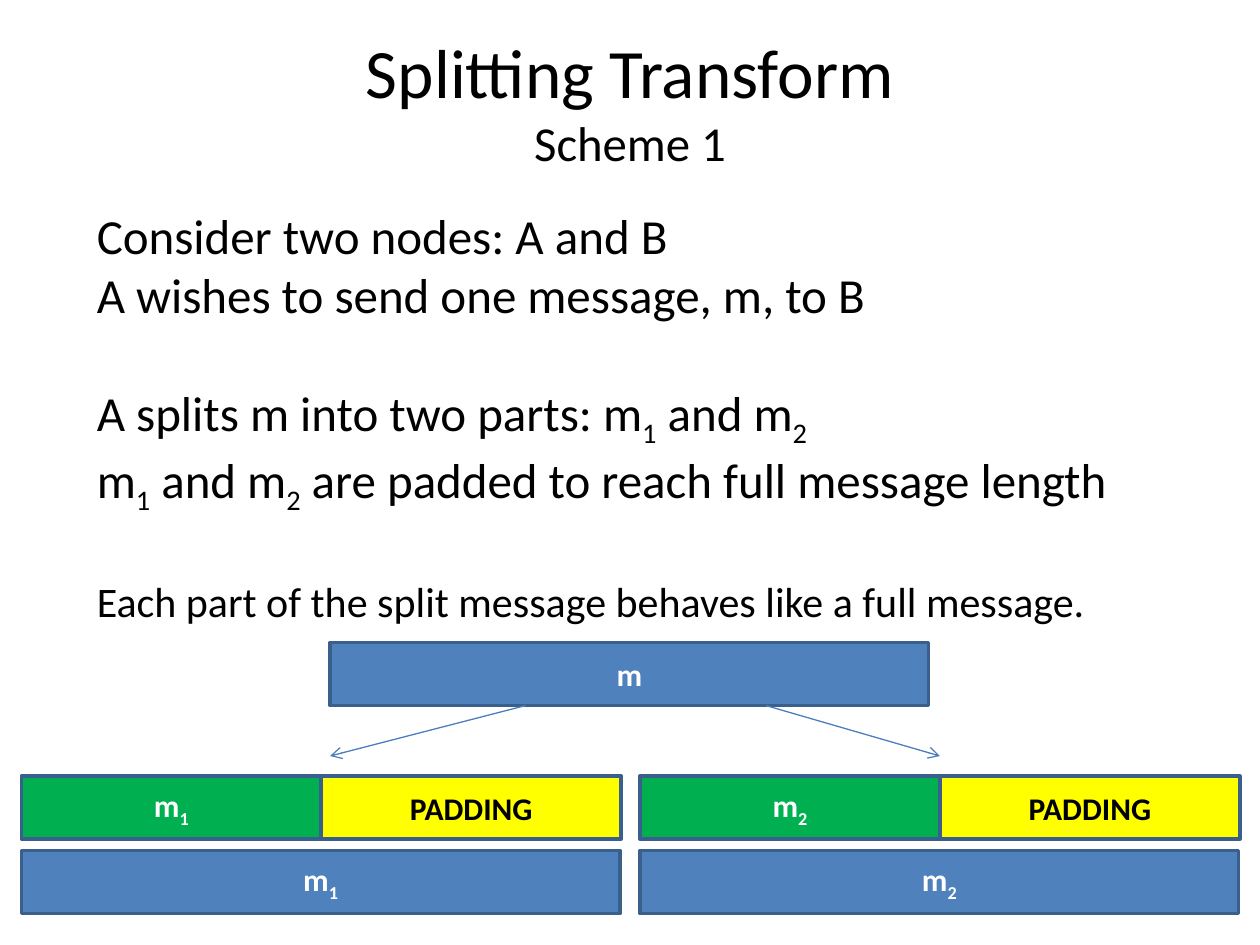
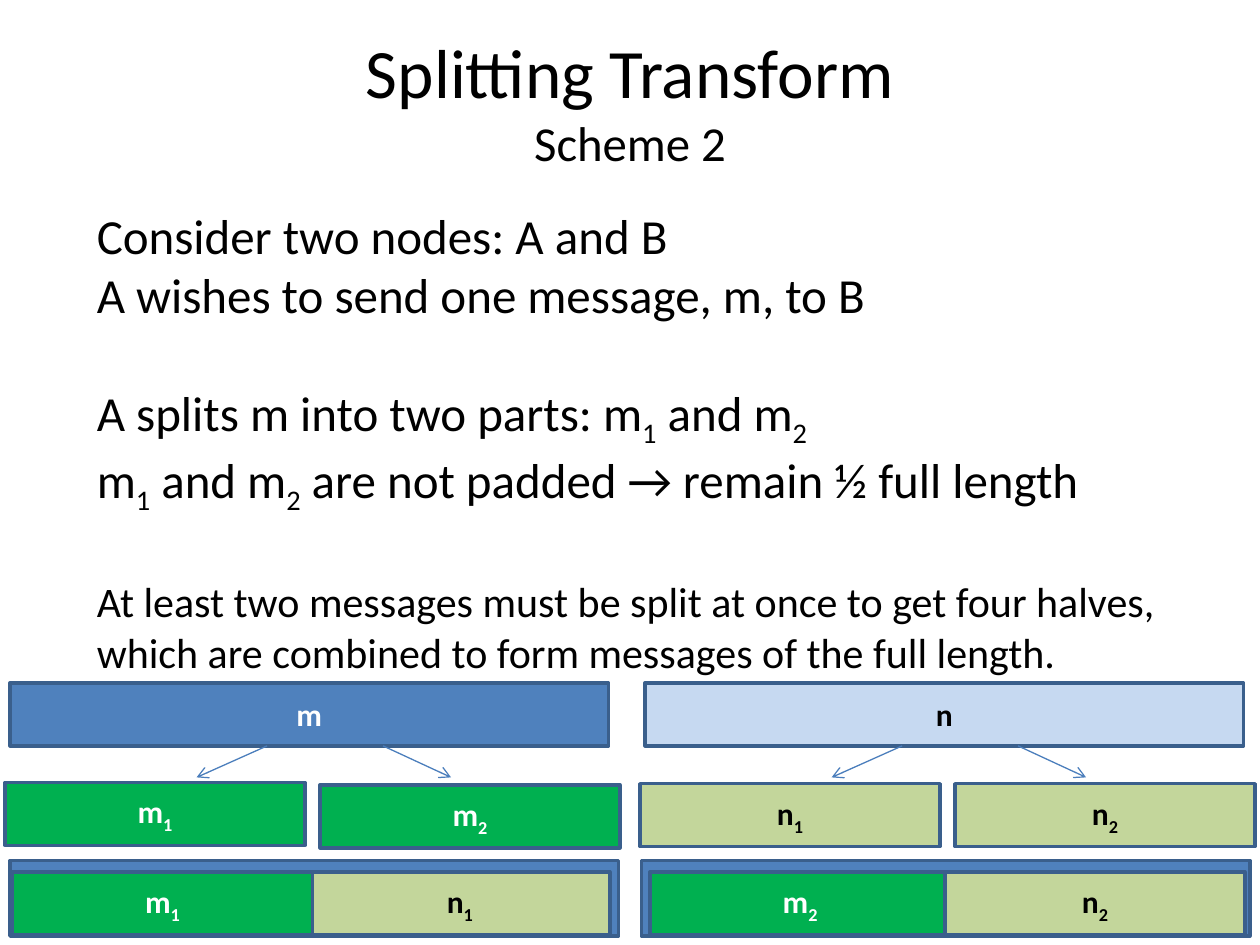
"""Builds two slides that explain the splitting transform schemes."""
from dataclasses import dataclass
from typing import NamedTuple

import lxml.etree
import pptx
import pptx.dml.color
import pptx.enum.shapes
import pptx.enum.text
import pptx.oxml.ns
import pptx.presentation
import pptx.shapes.connector
import pptx.slide
import pptx.text.text
import pptx.util

Inches = pptx.util.Inches
Pt = pptx.util.Pt
RGBColor = pptx.dml.color.RGBColor

BLACK = RGBColor(0x00, 0x00, 0x00)
WHITE = RGBColor(0xFF, 0xFF, 0xFF)
BLUE = RGBColor(0x4F, 0x81, 0xBD)
PALE_BLUE = RGBColor(0xC6, 0xD9, 0xF1)
GREEN = RGBColor(0x00, 0xB0, 0x50)
PALE_GREEN = RGBColor(0xC3, 0xD6, 0x9B)
YELLOW = RGBColor(0xFF, 0xFF, 0x00)
OUTLINE = RGBColor(0x3A, 0x5F, 0x8C)
ARROW = RGBColor(0x4B, 0x7E, 0xBC)

FONT = "Calibri"
FULL = 4.75
HALF = 2.38
BAR_HEIGHT = 0.5
BLOCK_GAP = Pt(34)
TITLE_ONLY = 5


class Style(NamedTuple):
    """Fill and text colour of a bar."""
    fill: RGBColor
    ink: RGBColor


MESSAGE_M = Style(BLUE, WHITE)
MESSAGE_N = Style(PALE_BLUE, BLACK)
PART_M = Style(GREEN, WHITE)
PART_N = Style(PALE_GREEN, BLACK)
PADDING = Style(YELLOW, BLACK)


@dataclass(frozen=True)
class Bar:
    """A labelled message bar, measured in inches."""
    label: str
    left: float
    top: float
    style: Style
    width: float = HALF
    height: float = BAR_HEIGHT


@dataclass(frozen=True)
class Arrow:
    """A splitting arrow, measured in inches."""
    x1: float
    y1: float
    x2: float
    y2: float


@dataclass(frozen=True)
class Line:
    """A line of body text; an underscore lowers the next character."""
    text: str
    size: int = 28
    new_block: bool = False


def write(p: pptx.text.text._Paragraph, text: str, size: float,
          color: RGBColor, bold: bool = False) -> None:
    """Write text into a paragraph, with subscripts after underscores."""
    first, *rest = text.split("_")
    pieces = [(first, False)]
    for piece in rest:
        pieces += [(piece[0], True), (piece[1:], False)]
    for piece, lowered in pieces:
        if not piece:
            continue
        r = p.add_run()
        r.text = piece
        r.font.name = FONT
        r.font.size = Pt(size)
        r.font.bold = bold
        r.font.color.rgb = color
        if lowered:
            r._r.get_or_add_rPr().set("baseline", "-25000")


def add_title(s: pptx.slide.Slide, scheme: str) -> None:
    """Fill the title placeholder with the topic and the scheme."""
    sp = s.shapes.title
    sp.left, sp.top = Inches(0.5), Inches(0.17)
    sp.width, sp.height = Inches(9), Inches(1.25)
    tf = sp.text_frame
    tf.text = f"Splitting Transform\v{scheme}"
    tf.auto_size = pptx.enum.text.MSO_AUTO_SIZE.NONE
    tf.vertical_anchor = pptx.enum.text.MSO_ANCHOR.MIDDLE
    p = tf.paragraphs[0]
    p.alignment = pptx.enum.text.PP_ALIGN.CENTER
    for r, size in zip(p.runs, (39.6, 27.9)):
        r.font.name = FONT
        r.font.size = Pt(size)
        r.font.color.rgb = BLACK


def add_body(s: pptx.slide.Slide, lines: list[Line]) -> None:
    """Add the explanation, with a gap before each new block."""
    sp = s.shapes.add_textbox(Inches(0.67), Inches(1.58), Inches(8.67), Inches(3.82))
    tf = sp.text_frame
    tf.word_wrap = True
    for i, line in enumerate(lines):
        p = tf.add_paragraph() if i else tf.paragraphs[0]
        p.space_before = BLOCK_GAP if line.new_block else Pt(0)
        write(p, line.text, line.size, BLACK)


def add_bar(s: pptx.slide.Slide, bar: Bar) -> None:
    """Draw one message bar."""
    sp = s.shapes.add_shape(
        pptx.enum.shapes.MSO_SHAPE.RECTANGLE, Inches(bar.left), Inches(bar.top),
        Inches(bar.width), Inches(bar.height))
    sp.shadow.inherit = False
    sp.fill.solid()
    sp.fill.fore_color.rgb = bar.style.fill
    sp.line.color.rgb = OUTLINE
    sp.line.width = Pt(2)
    tf = sp.text_frame
    tf.vertical_anchor = pptx.enum.text.MSO_ANCHOR.MIDDLE
    p = tf.paragraphs[0]
    p.alignment = pptx.enum.text.PP_ALIGN.CENTER
    write(p, bar.label, 18, bar.style.ink, bold=True)


def add_arrow(s: pptx.slide.Slide, arrow: Arrow) -> None:
    """Draw one arrow with an open head at its end."""
    cxn = s.shapes.add_connector(
        pptx.enum.shapes.MSO_CONNECTOR.STRAIGHT, Inches(arrow.x1), Inches(arrow.y1),
        Inches(arrow.x2), Inches(arrow.y2))
    cxn.line.color.rgb = ARROW
    cxn.line.width = Pt(0.75)
    qn = pptx.oxml.ns.qn
    lxml.etree.SubElement(cxn.line._get_or_add_ln(), qn("a:tailEnd"), type="arrow")
    lxml.etree.SubElement(cxn._element.spPr, qn("a:effectLst"))


def add_scheme(prs: pptx.presentation.Presentation, scheme: str, parts: str,
               conclusion: str, bars: list[Bar], arrows: list[Arrow]) -> None:
    """Add a slide for one scheme."""
    s = prs.slides.add_slide(prs.slide_layouts[TITLE_ONLY])
    add_title(s, scheme)
    add_body(s, [
        Line("Consider two nodes: A and B"),
        Line("A wishes to send one message, m, to B"),
        Line("A splits m into two parts: m_1 and m_2", new_block=True),
        Line(f"m_1 and m_2 are {parts}"),
        Line(conclusion, size=24, new_block=True),
    ])
    for bar in bars:
        add_bar(s, bar)
    for arrow in arrows:
        add_arrow(s, arrow)


def padded_bars() -> list[Bar]:
    """Return a message and its two padded parts."""
    bars = [Bar("m", 2.62, 5.1, MESSAGE_M, FULL)]
    for part, left in (("m_1", 0.17), ("m_2", 5.08)):
        bars += [
            Bar("PADDING", left + HALF, 6.16, PADDING),
            Bar(part, left, 6.16, PART_M),
            Bar(part, left, 6.75, MESSAGE_M, FULL),
        ]
    return bars


def combined_bars() -> list[Bar]:
    """Return two messages, their four halves and the combined messages."""
    frames = [Bar("", left, 6.83, MESSAGE_M, 4.83, 0.6) for left in (0.08, 5.09)]
    return frames + [
        Bar("m", 0.08, 5.42, MESSAGE_M, FULL),
        Bar("n", 5.12, 5.42, MESSAGE_N, FULL),
        Bar("m_2", 2.54, 6.23, PART_M),
        Bar("m_1", 0.04, 6.21, PART_M),
        Bar("n_2", 7.58, 6.22, PART_N),
        Bar("n_1", 5.08, 6.22, PART_N),
        Bar("n_1", 2.46, 6.92, PART_N),
        Bar("m_1", 0.1, 6.92, PART_M),
        Bar("m_2", 5.16, 6.92, PART_M),
        Bar("n_2", 7.5, 6.92, PART_N),
    ]


def main() -> None:
    """Build and save the presentation."""
    prs = pptx.Presentation()
    prs.slide_width, prs.slide_height = Inches(10), Inches(7.5)
    add_scheme(
        prs, "Scheme 1", "padded to reach full message length",
        "Each part of the split message behaves like a full message.",
        padded_bars(),
        [Arrow(4.17, 5.6, 2.62, 6), Arrow(6.08, 5.6, 7.46, 6)])
    add_scheme(
        prs, "Scheme 2", "not padded → remain ½ full length",
        "At least two messages must be split at once to get four halves, "
        "which are combined to form messages of the full length.",
        combined_bars(),
        [Arrow(x1 + shift, 5.92, x2 + shift, 6.17)
         for shift in (0, 5.04) for x1, x2 in ((2.12, 1.56), (3.04, 3.58))])
    prs.save("out.pptx")


if __name__ == "__main__":
    main()
